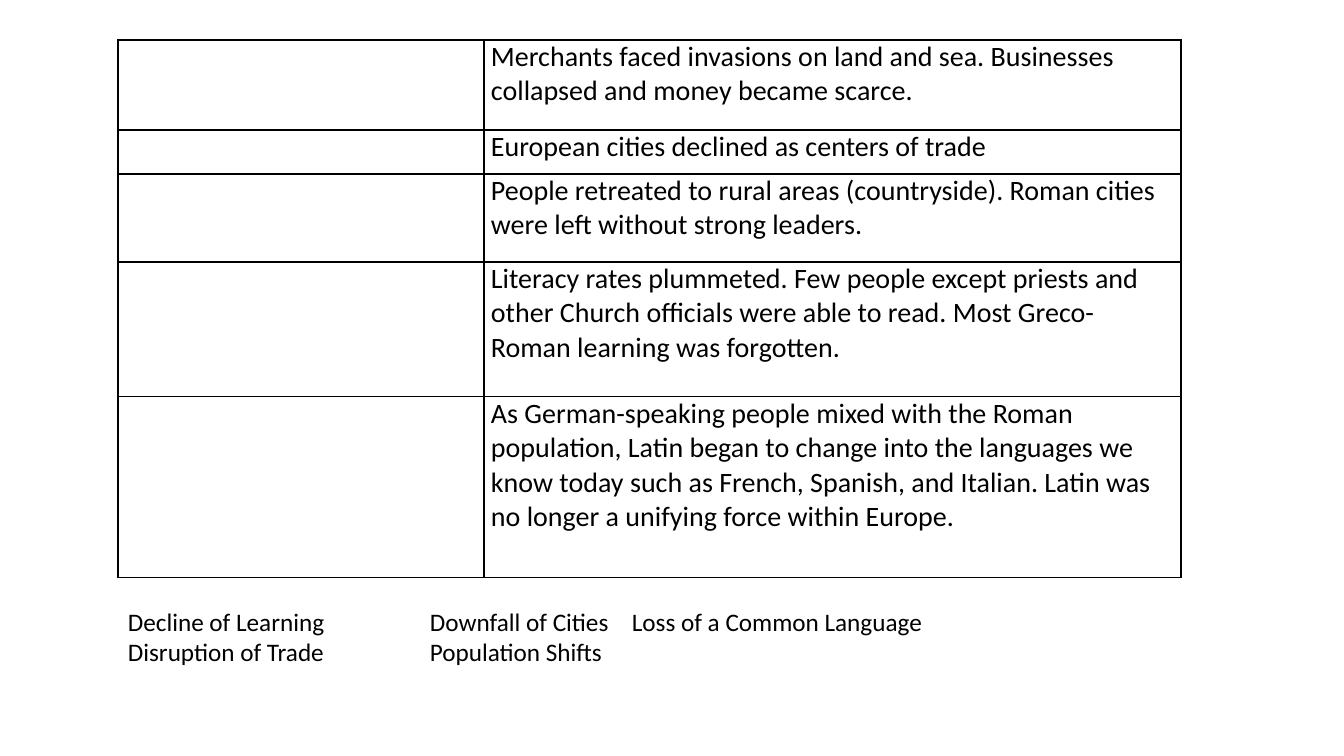
from lxml import etree
from pptx import Presentation
from pptx.dml.color import RGBColor
from pptx.enum.text import MSO_AUTO_SIZE
from pptx.oxml.ns import qn
from pptx.util import Pt

BLACK = RGBColor(0x00, 0x00, 0x00)
WHITE = RGBColor(0xFF, 0xFF, 0xFF)
FIT_SHAPE = MSO_AUTO_SIZE.SHAPE_TO_FIT_TEXT
EMU_PER_PX = 914400 / 100.8

EFFECTS = [
    "Merchants faced invasions on land and sea. Businesses collapsed and money became scarce.",
    "European cities declined as centers of trade",
    "People retreated to rural areas (countryside). Roman cities were left without strong leaders.",
    "Literacy rates plummeted. Few people except priests and other Church officials were able "
    "to read. Most Greco-Roman learning was forgotten.",
    "As German-speaking people mixed with the Roman population, Latin began to change into the "
    "languages we know today such as French, Spanish, and Italian. Latin was no longer a "
    "unifying force within Europe.",
]
WORD_BANK = [
    ["Decline of Learning", "Downfall of Cities", "Loss of a Common Language"],
    ["Disruption of Trade", "Population Shifts"],
]


def px(length):
    """Convert pixels to EMU."""
    return round(length * EMU_PER_PX)


class Worksheet:
    """Draw worksheet elements on one slide in a shared style."""

    font_name = "Calibri"

    def __init__(self, presentation):
        """Add a blank slide to the presentation."""
        self.slide = presentation.slides.add_slide(presentation.slide_layouts[6])

    def style(self, paragraph, size):
        """Apply the common font to a paragraph."""
        paragraph.font.name = self.font_name
        paragraph.font.size = Pt(size)
        paragraph.font.color.rgb = BLACK

    def border(self, cell):
        """Outline a cell with thin black lines."""
        properties = cell._tc.get_or_add_tcPr()
        for position, side in enumerate(("lnL", "lnR", "lnT", "lnB")):
            line = etree.Element(qn(f"a:{side}"), w=str(Pt(1)))
            fill = etree.SubElement(line, qn("a:solidFill"))
            etree.SubElement(fill, qn("a:srgbClr"), val=str(BLACK))
            properties.insert(position, line)

    def table(self, left, top, widths, heights, answers, size):
        """Add a ruled table with text in its last column."""
        frame = self.slide.shapes.add_table(
            len(heights), len(widths), px(left), px(top), px(sum(widths)), px(sum(heights)))
        table = frame.table
        table.first_row = table.horz_banding = False
        for column, width in zip(table.columns, widths):
            column.width = px(width)
        for row, height in zip(table.rows, heights):
            row.height = px(height)
        for cell in table.iter_cells():
            cell.margin_left = cell.margin_right = px(7)
            cell.margin_top = cell.margin_bottom = 0
            cell.fill.solid()
            cell.fill.fore_color.rgb = WHITE
            self.border(cell)
        for index, answer in enumerate(answers):
            paragraph = table.cell(index, len(widths) - 1).text_frame.paragraphs[0]
            paragraph.text = answer
            self.style(paragraph, size)

    def tabbed_text(self, left, top, width, height, lines, stops, size):
        """Add a text box whose entries align at tab stops."""
        box = self.slide.shapes.add_textbox(px(left), px(top), px(width), px(height))
        frame = box.text_frame
        frame.word_wrap = True
        frame.auto_size = FIT_SHAPE
        frame.text = "\n".join("\t".join(entries) for entries in lines)
        for paragraph in frame.paragraphs:
            properties = paragraph._p.get_or_add_pPr()
            tabs = etree.SubElement(properties, qn("a:tabLst"))
            for stop in stops:
                etree.SubElement(tabs, qn("a:tab"), pos=str(px(stop)), algn="l")
            self.style(paragraph, size)


def main():
    """Build and save the worksheet slide."""
    presentation = Presentation()
    presentation.slide_width = px(1344)
    presentation.slide_height = px(756)
    worksheet = Worksheet(presentation)
    worksheet.table(118, 40, [366, 697], [90, 44, 88, 135, 181], EFFECTS, 20)
    worksheet.tabbed_text(118, 601, 981, 72, WORD_BANK, [302, 504], 18)
    presentation.save("out.pptx")


if __name__ == "__main__":
    main()
